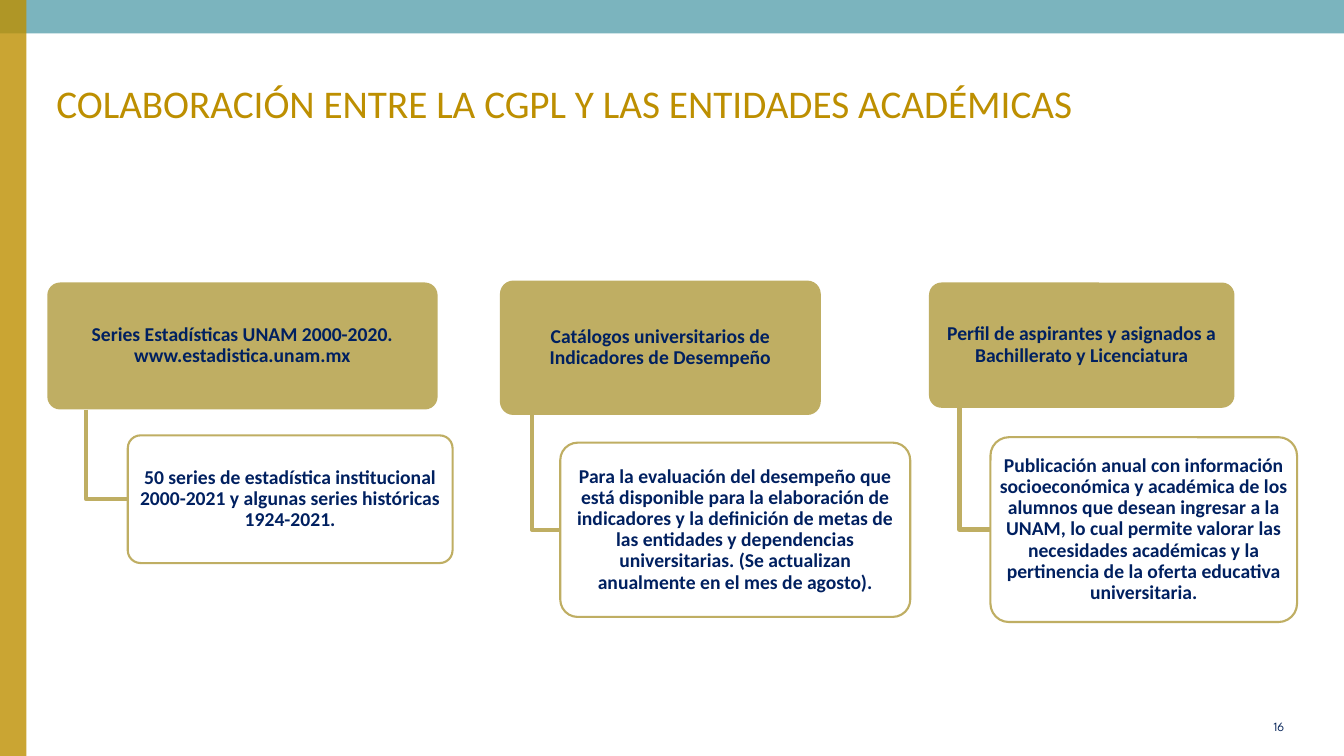
import pptx
import pptx.dml.color
import pptx.enum.shapes
import pptx.enum.text
import pptx.oxml
import pptx.oxml.ns
import pptx.util

Pt = pptx.util.Pt
RGBColor = pptx.dml.color.RGBColor
ALIGN = pptx.enum.text.PP_ALIGN
MIDDLE = pptx.enum.text.MSO_ANCHOR.MIDDLE
SHAPES = pptx.enum.shapes.MSO_SHAPE

TEAL = RGBColor(0x5A, 0xA2, 0xAE)
GOLD = RGBColor(0xBD, 0x8F, 0x01)
SAND = RGBColor(0xBF, 0xAE, 0x63)
NAVY = RGBColor(0x00, 0x20, 0x60)
NUMBER_BLUE = RGBColor(0x09, 0x26, 0x5B)

SLIDE_WIDTH, SLIDE_HEIGHT = 960, 540
TITLE = "COLABORACIÓN ENTRE LA CGPL Y LAS ENTIDADES ACADÉMICAS"
COLUMNS = [
    ((33.8, 201.8, 278.8, 90.7), "Series Estadísticas UNAM 2000-2020. www.estadistica.unam.mx",
     (91.3, 311, 232, 91.2),
     "50 series de estadística institucional 2000-2021 y algunas series históricas 1924-2021."),
    ((357.1, 200.4, 229.2, 96), "Catálogos universitarios de Indicadores de Desempeño",
     (400.2, 316.2, 250, 124.5),
     "Para la evaluación del desempeño que está disponible para la elaboración de indicadores "
     "y la definición de metas de las entidades y dependencias universitarias. "
     "(Se actualizan anualmente en el mes de agosto)."),
    ((663.6, 201.8, 218.2, 89.5), "Perfil de aspirantes y asignados a Bachillerato y Licenciatura",
     (707.5, 312.3, 219, 132),
     "Publicación anual con información socioeconómica y académica de los alumnos que desean "
     "ingresar a la UNAM, lo cual permite valorar las necesidades académicas y la pertinencia "
     "de la oferta educativa universitaria."),
]


def write_text(shape, text, size, color, alignment, font="Calibri", bold=False):
    """Write one formatted run, centred vertically in the shape."""
    frame = shape.text_frame
    frame.word_wrap = True
    frame.vertical_anchor = MIDDLE
    paragraph = frame.paragraphs[0]
    paragraph.alignment = alignment
    run = paragraph.add_run()
    run.text = text
    run.font.name = font
    run.font.size = Pt(size)
    run.font.bold = bold
    run.font.color.rgb = color
    return paragraph


def add_bar(slide, box, color):
    """Add a translucent decorative bar."""
    bar = slide.shapes.add_shape(SHAPES.RECTANGLE, *map(Pt, box))
    bar.shadow.inherit = False
    bar.line.fill.background()
    bar.fill.solid()
    bar.fill.fore_color.rgb = color
    color_element = bar.fill._xPr.find(".//" + pptx.oxml.ns.qn("a:srgbClr"))
    alpha = pptx.oxml.parse_xml(f'<a:alpha {pptx.oxml.ns.nsdecls("a")} val="80000"/>')
    color_element.append(alpha)


def add_title(slide, box):
    """Place and fill the title placeholder."""
    title = slide.shapes.title
    title.left, title.top, title.width, title.height = map(Pt, box)
    write_text(title, TITLE, 28, GOLD, ALIGN.LEFT)


def add_card(slide, box, text, filled):
    """Add a rounded card, either filled or outlined."""
    card = slide.shapes.add_shape(SHAPES.ROUNDED_RECTANGLE, *map(Pt, box))
    card.adjustments[0] = 0.1
    card.shadow.inherit = False
    if filled:
        card.fill.solid()
        card.fill.fore_color.rgb = SAND
        card.line.fill.background()
    else:
        card.fill.background()
        card.line.color.rgb = SAND
        card.line.width = Pt(1.5)
    frame = card.text_frame
    frame.margin_left = frame.margin_right = Pt(2.1)
    frame.margin_top = frame.margin_bottom = Pt(1.4)
    paragraph = write_text(card, text, 14, NAVY, ALIGN.CENTER, bold=True)
    paragraph.line_spacing = 0.9


def add_elbow(slide, header_box, detail_box):
    """Join the foot of a header to the left side of its detail card."""
    left, top, width, height = header_box
    start_x, start_y = left + width / 10, top + height
    end_x, end_y = detail_box[0], detail_box[1] + detail_box[3] / 2
    builder = slide.shapes.build_freeform(Pt(start_x), Pt(start_y))
    builder.add_line_segments([(Pt(start_x), Pt(end_y)), (Pt(end_x), Pt(end_y))], close=False)
    elbow = builder.convert_to_shape()
    elbow.shadow.inherit = False
    elbow.fill.background()
    elbow.line.color.rgb = SAND
    elbow.line.width = Pt(3)


def add_column(slide, header_box, header, detail_box, detail):
    """Add a header card, its detail card and the elbow between them."""
    add_card(slide, header_box, header, filled=True)
    add_elbow(slide, header_box, detail_box)
    add_card(slide, detail_box, detail, filled=False)


def add_slide_number(slide, box):
    """Add the slide number."""
    number = slide.shapes.add_textbox(*map(Pt, box))
    write_text(number, "16", 9, NUMBER_BLUE, ALIGN.RIGHT, font="League Spartan")


def main():
    """Build and save the presentation."""
    presentation = pptx.Presentation()
    presentation.slide_width = Pt(SLIDE_WIDTH)
    presentation.slide_height = Pt(SLIDE_HEIGHT)
    slide = presentation.slides.add_slide(presentation.slide_layouts[5])
    add_bar(slide, (0, 0, SLIDE_WIDTH, 23.8), TEAL)
    add_bar(slide, (0, 0, 18.8, SLIDE_HEIGHT), GOLD)
    add_title(slide, (33.1, 48.3, 891.4, 50.4))
    for column in COLUMNS:
        add_column(slide, *column)
    add_slide_number(slide, (881.3, 504.7, 43.2, 28.8))
    presentation.save("out.pptx")


if __name__ == "__main__":
    main()
